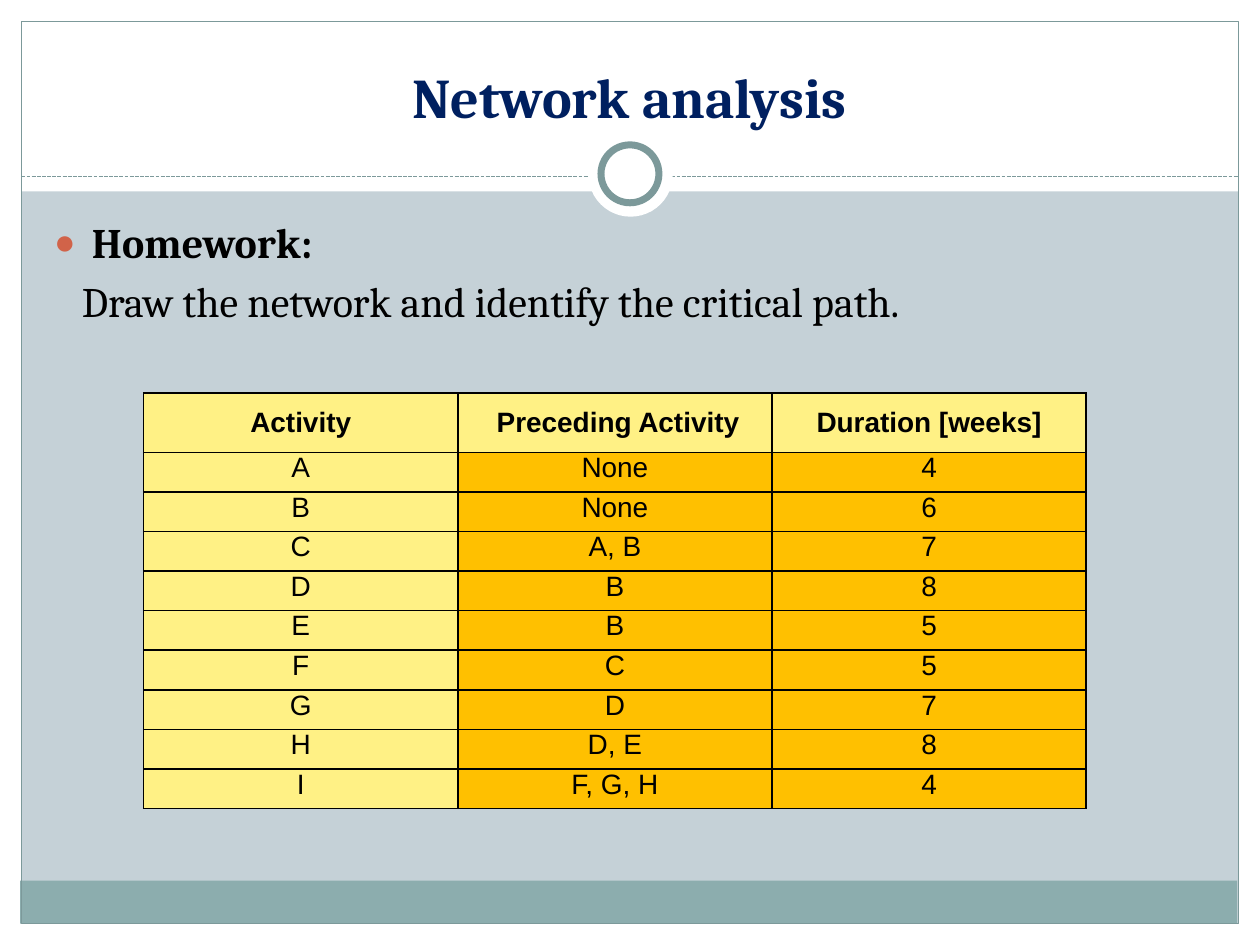
from lxml import etree
from pptx import Presentation
from pptx.dml.color import RGBColor
from pptx.enum import dml, shapes, text
from pptx.oxml import parse_xml
from pptx.oxml.ns import nsdecls, qn
from pptx.util import Inches, Pt

WHITE, BLACK, SLATE, TEAL = "FFFFFF", "000000", "7C999A", "8CADAE"
PALE, GOLD = "FFF185", "FFC000"
RECT, OVAL = shapes.MSO_SHAPE.RECTANGLE, shapes.MSO_SHAPE.OVAL

ACTIVITIES = [
    ("Activity", "Preceding Activity", "Duration [weeks]"),
    ("A", "None", "4"),
    ("B", "None", "6"),
    ("C", "A, B", "7"),
    ("D", "B", "8"),
    ("E", "B", "5"),
    ("F", "C", "5"),
    ("G", "D", "7"),
    ("H", "D, E", "8"),
    ("I", "F, G, H", "4"),
]


def rgb(value):
    return RGBColor.from_string(value)


def add_run(p, words, font, size, color, bold=False):
    r = p.add_run()
    r.text = words
    r.font.name = font
    r.font.size = Pt(size)
    r.font.bold = bold
    r.font.color.rgb = rgb(color)


def add_block(s, kind, box, fill=None, line=None, width=0.75):
    sp = s.shapes.add_shape(kind, *map(Inches, box))
    sp.shadow.inherit = False
    if fill:
        sp.fill.solid()
        sp.fill.fore_color.rgb = rgb(fill)
    else:
        sp.fill.background()
    if line:
        sp.line.color.rgb = rgb(line)
        sp.line.width = Pt(width)
    else:
        sp.line.fill.background()


def add_divider(s, left, right, y):
    line = s.shapes.add_connector(
        shapes.MSO_CONNECTOR.STRAIGHT, *map(Inches, (left, y, right, y)))
    line.line.color.rgb = rgb(SLATE)
    line.line.width = Pt(0.75)
    line.line.dash_style = dml.MSO_LINE.SQUARE_DOT
    etree.SubElement(line._element.spPr, qn("a:effectLst"))


def add_frame(s):
    for box in [(0, 7.33, 10, 0.17), (0, 0, 10, 1.52),
                (0, 0, 0.17, 7.5), (9.83, 0, 0.17, 7.5)]:
        add_block(s, RECT, box, WHITE)
    add_block(s, RECT, (0.16, 6.99, 9.66, 0.34), TEAL)
    add_block(s, RECT, (0.17, 0.17, 9.66, 7.16), line=SLATE)
    add_divider(s, 0.17, 9.83, 1.4)
    add_block(s, OVAL, (4.67, 1.05, 0.67, 0.67), WHITE)
    add_block(s, OVAL, (4.77, 1.15, 0.46, 0.46), WHITE, SLATE, 4)


def place(s, sp, box, anchor):
    s.shapes._spTree.append(sp._element)
    sp.left, sp.top, sp.width, sp.height = map(Inches, box)
    tf = sp.text_frame
    tf.auto_size = text.MSO_AUTO_SIZE.NONE
    tf.word_wrap = True
    tf.vertical_anchor = anchor
    return tf


def set_bullet(p, indent, hanging, *marks):
    pPr = p._p.get_or_add_pPr()
    pPr.set("marL", str(Inches(indent)))
    pPr.set("indent", str(Inches(-hanging)))
    for mark in marks:
        pPr.append(parse_xml(mark.replace("/>", f" {nsdecls('a')}/>", 1)
                   if mark.endswith("/>") and mark.count("<") == 1
                   else mark.replace(">", f" {nsdecls('a')}>", 1)))


def fill_title(s):
    tf = place(s, s.shapes.title, (0.33, 0.25, 9.33, 0.83),
               text.MSO_ANCHOR.BOTTOM)
    p = tf.paragraphs[0]
    p.alignment = text.PP_ALIGN.CENTER
    add_run(p, "Network analysis", "Cambria", 32, "002060", True)


def fill_body(s):
    tf = place(s, s.placeholders[1], (0.33, 1.67, 9.36, 5),
               text.MSO_ANCHOR.TOP)
    p = tf.paragraphs[0]
    set_bullet(p, 0.3, 0.3,
               '<a:buClr><a:srgbClr val="D16349"/></a:buClr>',
               '<a:buSzPct val="85000"/>',
               '<a:buFont typeface="Arial"/>',
               '<a:buChar char="●"/>')
    add_run(p, "Homework:", "Cambria", 24, BLACK, True)
    p = tf.add_paragraph()
    set_bullet(p, 0.22, 0, "<a:buNone/>")
    add_run(p, "Draw the network and identify the critical path.",
            "Cambria", 24, BLACK)


def add_borders(cell):
    tcPr = cell._tc.get_or_add_tcPr()
    for i, side in enumerate("LRTB"):
        tcPr.insert(i, parse_xml(
            f'<a:ln{side} w="{Pt(1)}" {nsdecls("a")}><a:solidFill>'
            f'<a:srgbClr val="{BLACK}"/></a:solidFill></a:ln{side}>'))


def fill_cell(cell, words, header, fill):
    cell.margin_left = cell.margin_right = Inches(0.05)
    cell.margin_top = cell.margin_bottom = 0
    cell.vertical_anchor = (text.MSO_ANCHOR.MIDDLE if header
                            else text.MSO_ANCHOR.TOP)
    cell.fill.solid()
    cell.fill.fore_color.rgb = rgb(fill)
    add_borders(cell)
    p = cell.text_frame.paragraphs[0]
    p.alignment = text.PP_ALIGN.CENTER
    add_run(p, words, "Arial", 16, BLACK, header)


def add_activity_table(s):
    height, header_height = 3.3, 0.47
    rows, cols = len(ACTIVITIES), len(ACTIVITIES[0])
    table = s.shapes.add_table(
        rows, cols, *map(Inches, (1.14, 3.12, 7.48, height))).table
    for i, values in enumerate(ACTIVITIES):
        table.rows[i].height = Inches(
            (height - header_height) / (rows - 1) if i else header_height)
        for j, words in enumerate(values):
            fill = GOLD if i and j else PALE
            fill_cell(table.cell(i, j), words, i == 0, fill)
    heading = table.cell(0, 1).text_frame.paragraphs[0]
    heading._p.get_or_add_pPr().set("indent", str(Inches(0.05)))


def main():
    prs = Presentation()
    prs.slide_width, prs.slide_height = Inches(10), Inches(7.5)
    s = prs.slides.add_slide(prs.slide_layouts[1])
    s.background.fill.solid()
    s.background.fill.fore_color.rgb = rgb("C5D1D7")
    add_frame(s)
    fill_title(s)
    fill_body(s)
    add_activity_table(s)
    prs.save("out.pptx")


if __name__ == "__main__":
    main()
